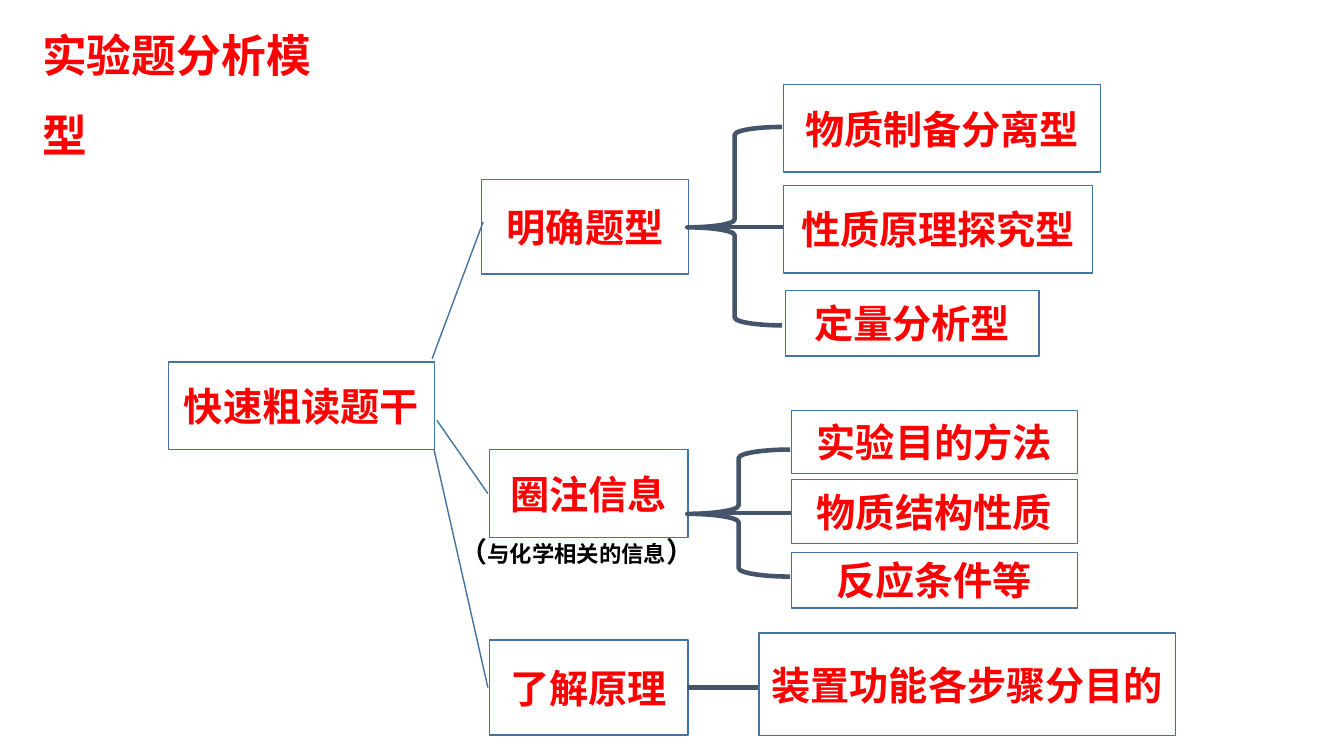
from dataclasses import dataclass

from lxml import etree
from pptx import Presentation
from pptx import util as u
from pptx.dml.color import RGBColor
from pptx.enum import shapes, text
from pptx.oxml.ns import qn


@dataclass(frozen=True)
class Theme:
    red: str = "FF0000"
    black: str = "000000"
    white: str = "FFFFFF"
    border: str = "43739E"
    brace: str = "44546A"
    title_size: int = 32
    box_size: int = 28
    bracket_size: int = 20
    note_size: int = 16
    border_width: float = 1
    brace_width: float = 3.25
    box_font: str = "Calibri"
    note_font: str = "Arial"
    chinese_font: str = "Noto Sans CJK SC"


class MindMap:
    def __init__(self, slide, theme):
        self.slide = slide
        self.theme = theme

    def format_run(self, run, font_name, size, color):
        run.font.name = font_name
        run.font.size = u.Pt(size)
        run.font.bold = True
        run.font.color.rgb = RGBColor.from_string(color)
        east_asian = etree.SubElement(run.font._element, qn("a:ea"))
        east_asian.set("typeface", self.theme.chinese_font)

    def format_line(self, line, color, width):
        line.color.rgb = RGBColor.from_string(color)
        line.width = u.Pt(width)

    def add_text(self, place, runs, font_name, color, spacing=None):
        shape = self.slide.shapes.add_textbox(*map(u.Cm, place))
        frame = shape.text_frame
        frame.word_wrap = True
        frame.auto_size = text.MSO_AUTO_SIZE.SHAPE_TO_FIT_TEXT
        paragraph = frame.paragraphs[0]
        if spacing:
            frame.vertical_anchor = text.MSO_ANCHOR.MIDDLE
            paragraph.line_spacing = spacing
        for words, size in runs:
            run = paragraph.add_run()
            run.text = words
            self.format_run(run, font_name, size, color)

    def add_box(self, words, place, kind=shapes.MSO_SHAPE.RECTANGLE, adjustments=()):
        theme = self.theme
        shape = self.slide.shapes.add_shape(kind, *map(u.Cm, place))
        shape.shadow.inherit = False
        for index, value in enumerate(adjustments):
            shape.adjustments[index] = value
        shape.fill.solid()
        shape.fill.fore_color.rgb = RGBColor.from_string(theme.white)
        self.format_line(shape.line, theme.border, theme.border_width)
        frame = shape.text_frame
        frame.text = words
        frame.word_wrap = True
        frame.vertical_anchor = text.MSO_ANCHOR.MIDDLE
        paragraph = frame.paragraphs[0]
        paragraph.alignment = text.PP_ALIGN.CENTER
        self.format_run(paragraph.runs[0], theme.box_font, theme.box_size, theme.red)

    def add_callout(self, words, place, adjustments):
        self.add_box(words, place, shapes.MSO_SHAPE.LINE_CALLOUT_1, adjustments)

    def add_brace(self, place):
        shape = self.slide.shapes.add_shape(shapes.MSO_SHAPE.LEFT_BRACE, *map(u.Cm, place))
        shape.shadow.inherit = False
        shape.adjustments[0] = 0.083
        shape.adjustments[1] = 0.506
        shape.fill.background()
        self.format_line(shape.line, self.theme.brace, self.theme.brace_width)

    def add_link(self, left, right, y):
        ends = map(u.Cm, (left, y, right, y))
        connector = self.slide.shapes.add_connector(shapes.MSO_CONNECTOR.STRAIGHT, *ends)
        self.format_line(connector.line, self.theme.brace, self.theme.brace_width)
        etree.SubElement(connector._element.spPr, qn("a:effectLst"))


def main():
    presentation = Presentation()
    presentation.slide_width = u.Cm(33.87)
    presentation.slide_height = u.Cm(19.05)
    slide = presentation.slides.add_slide(presentation.slide_layouts[6])
    theme = Theme()
    mind_map = MindMap(slide, theme)

    mind_map.add_text((0.81, 0.89, 8.4, 2.31), [("实验题分析模型", theme.title_size)],
                      theme.chinese_font, theme.red, spacing=1.5)

    branches = [
        ("圈注信息", (12.34, 11.33, 5, 2.21), (0.501, -0.009, -0.334, -0.266)),
        ("明确题型", (12.14, 4.52, 5.21, 2.39), (0.449, 0.007, 1.892, -0.24)),
        ("了解原理", (12.34, 16.13, 5, 2.39), (0.501, -0.009, -2.032, -0.283)),
    ]
    for words, place, adjustments in branches:
        mind_map.add_callout(words, place, adjustments)

    note = [("（", theme.bracket_size), ("与化学相关的信息", theme.note_size),
            ("）", theme.bracket_size)]
    mind_map.add_text((11.33, 13.34, 6.48, 1.12), note, theme.note_font, theme.black)

    for place in [(17.32, 3.2, 2.39, 5), (17.32, 11.33, 2.59, 3.2)]:
        mind_map.add_brace(place)
    for left, right, y in [(17.93, 19.74, 5.72), (18.14, 19.94, 12.93), (17.32, 19.13, 17.32)]:
        mind_map.add_link(left, right, y)

    boxes = [
        ("快速粗读题干", (4.24, 9.12, 6.71, 2.21)),
        ("物质制备分离型", (19.74, 2.13, 8, 2.21)),
        ("性质原理探究型", (19.74, 4.67, 7.8, 2.21)),
        ("定量分析型", (19.79, 7.32, 6.4, 1.65)),
        ("实验目的方法", (19.94, 10.34, 7.21, 1.6)),
        ("物质结构性质", (19.94, 12.09, 7.21, 1.6)),
        ("反应条件等", (19.94, 13.92, 7.21, 1.4)),
        ("装置功能各步骤分目的", (19.13, 15.95, 10.49, 2.59)),
    ]
    for words, place in boxes:
        mind_map.add_box(words, place)

    presentation.save("out.pptx")


if __name__ == "__main__":
    main()
